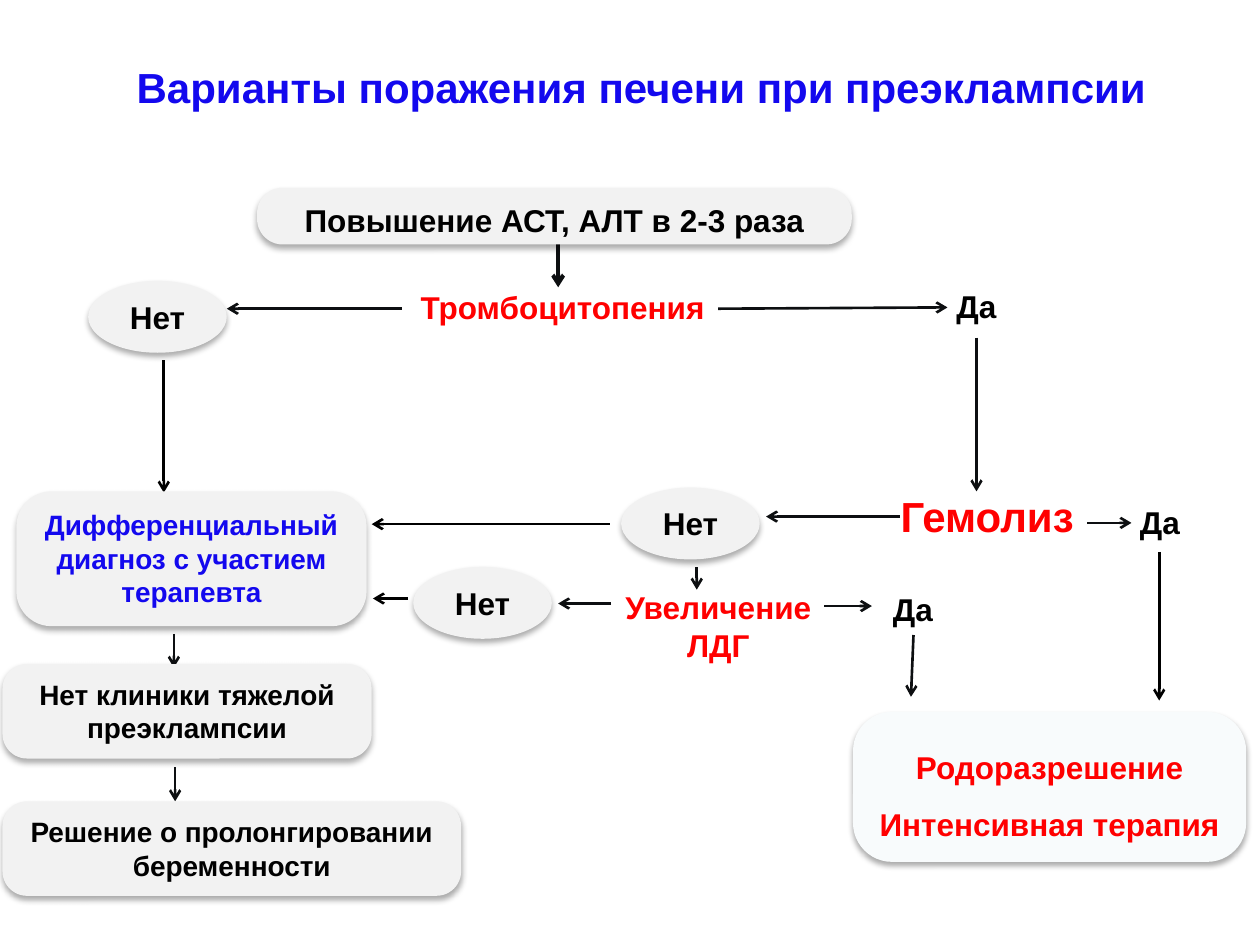
from lxml.etree import SubElement
from pptx import Presentation
from pptx.dml.color import RGBColor
from pptx.enum.shapes import MSO_CONNECTOR, MSO_SHAPE
from pptx.enum.text import MSO_ANCHOR, MSO_AUTO_SIZE, PP_ALIGN
from pptx.oxml.ns import qn
from pptx.util import Inches, Pt

COLORS = {"blue": "1308EE", "red": "FF0000", "black": "000000",
          "ink": "0D0F11", "gray": "F2F2F2", "pale": "F8FBFC"}

TITLE = "Варианты поражения печени при преэклампсии"

# Plain labels: text, (left, top, width, height), size, color
LABELS = [
    ("Тромбоцитопения", (3.24, 2.24, 2.55, 0.4), 18, "red"),
    ("Гемолиз", (7.05, 3.84, 1.59, 0.5), 24, "red"),
    ("Увеличение ЛДГ", (4.84, 4.62, 1.72, 0.71), 18, "red"),
    ("Да", (7.4, 2.23, 0.7, 0.4), 18, "black"),
    ("Да", (8.91, 3.94, 0.59, 0.4), 18, "black"),
    ("Да", (6.97, 4.63, 0.55, 0.4), 18, "black"),
]
LEFT_ALIGNED = {"Тромбоцитопения", "Гемолиз"}
UNWRAPPED = {"Гемолиз"}

# "No" ovals: left, top
NO_OVALS = [(0.7, 2.23), (4.93, 3.87), (3.28, 4.5)]
OVAL_SIZE = (1.1, 0.57)

# Rounded boxes: lines, (left, top, width, height), corner, size, color, fill, line spacing
BOXES = [
    (["Повышение АСТ, АЛТ в 2-3 раза"],
     (2.04, 1.49, 4.72, 0.45), 0.45, 18, "black", "gray", None),
    (["Дифференциальный диагноз с участием терапевта"],
     (0.13, 3.9, 2.78, 1.07), 0.26, 16, "blue", "gray", None),
    (["Нет клиники тяжелой преэклампсии"],
     (0.02, 5.27, 2.93, 0.75), 0.26, 16, "black", "gray", None),
    (["Решение о пролонгировании беременности"],
     (0.02, 6.36, 3.64, 0.75), 0.26, 16, "black", "gray", None),
    (["Родоразрешение", "Интенсивная терапия"],
     (6.77, 5.65, 3.12, 1.19), 0.26, 18, "red", "pale", 1.5),
]

# Arrows: start x, start y, end x, end y
INK_ARROWS = [
    (3.19, 2.45, 1.8, 2.45), (5.7, 2.45, 7.52, 2.44), (7.75, 2.68, 7.75, 3.9),
    (7.14, 4.1, 6.08, 4.1), (8.63, 4.15, 8.98, 4.15), (6.54, 4.81, 6.92, 4.81),
    (4.85, 4.79, 4.43, 4.79), (5.53, 4.5, 5.53, 4.68), (7.25, 5.04, 7.23, 5.53),
    (1.38, 5.03, 1.38, 5.3), (1.39, 6.09, 1.39, 6.36),
]
BLACK_ARROWS = [
    (4.84, 4.16, 2.95, 4.16), (1.3, 2.86, 1.3, 3.91),
    (3.24, 4.75, 2.96, 4.75), (9.2, 4.38, 9.2, 5.56),
]
FIRST_ARROW = (4.43, 1.93, 4.43, 2.28)


def rgb(name):
    return RGBColor.from_string(COLORS[name])


def write(shape, lines, size, color, align=PP_ALIGN.CENTER, spacing=None,
          anchor=MSO_ANCHOR.TOP, wrap=True):
    frame = shape.text_frame
    frame.word_wrap = wrap
    frame.auto_size = MSO_AUTO_SIZE.SHAPE_TO_FIT_TEXT
    frame.vertical_anchor = anchor
    frame.text = "\n".join(lines)
    for para in frame.paragraphs:
        para.alignment = align
        para.line_spacing = spacing
        para.font.name = "Arial"
        para.font.size = Pt(size)
        para.font.bold = True
        para.font.color.rgb = rgb(color)


def add_label(page, text, place, size, color, **options):
    box = page.shapes.add_textbox(*map(Inches, place))
    write(box, [text], size, color, **options)
    return box


def add_soft_shadow(shape):
    shape.shadow.inherit = False
    effects = shape._element.spPr.find(qn("a:effectLst"))
    shadow = SubElement(effects, qn("a:outerShdw"), blurRad=str(Pt(3.5)),
                        dist=str(Pt(2.2)), dir="5400000", rotWithShape="0")
    tint = SubElement(shadow, qn("a:srgbClr"), val=COLORS["black"])
    SubElement(tint, qn("a:alpha"), val="32000")


def add_node(page, kind, place, fill):
    node = page.shapes.add_shape(kind, *map(Inches, place))
    node.fill.solid()
    node.fill.fore_color.rgb = rgb(fill)
    node.line.fill.background()
    add_soft_shadow(node)
    return node


def add_arrow(page, points, color, width=1.5):
    arrow = page.shapes.add_connector(MSO_CONNECTOR.STRAIGHT, *map(Inches, points))
    arrow.line.color.rgb = rgb(color)
    arrow.line.width = Pt(width)
    SubElement(arrow.line._get_or_add_ln(), qn("a:tailEnd"), type="arrow")
    SubElement(arrow._element.spPr, qn("a:effectLst"))


def main():
    deck = Presentation()
    deck.slide_width, deck.slide_height = Inches(10), Inches(7.5)
    page = deck.slides.add_slide(deck.slide_layouts[6])

    # Title and plain labels
    title = add_label(page, TITLE, (0.59, 0.36, 9, 0.65), 24, "blue",
                      anchor=MSO_ANCHOR.MIDDLE)
    title.text_frame.auto_size = MSO_AUTO_SIZE.NONE
    for text, place, size, color in LABELS:
        align = PP_ALIGN.LEFT if text in LEFT_ALIGNED else PP_ALIGN.CENTER
        add_label(page, text, place, size, color, align=align,
                  wrap=text not in UNWRAPPED)

    # Arrows
    add_arrow(page, FIRST_ARROW, "ink", 2.25)
    for color, arrows in (("ink", INK_ARROWS), ("black", BLACK_ARROWS)):
        for points in arrows:
            add_arrow(page, points, color)

    # Ovals and rounded boxes
    for corner in NO_OVALS:
        oval = add_node(page, MSO_SHAPE.FLOWCHART_CONNECTOR, corner + OVAL_SIZE, "gray")
        write(oval, ["Нет"], 18, "black")
    for lines, place, corner, size, color, fill, spacing in BOXES:
        box = add_node(page, MSO_SHAPE.ROUNDED_RECTANGLE, place, fill)
        box.adjustments[0] = corner
        write(box, lines, size, color, spacing=spacing)

    deck.save("out.pptx")


if __name__ == "__main__":
    main()
